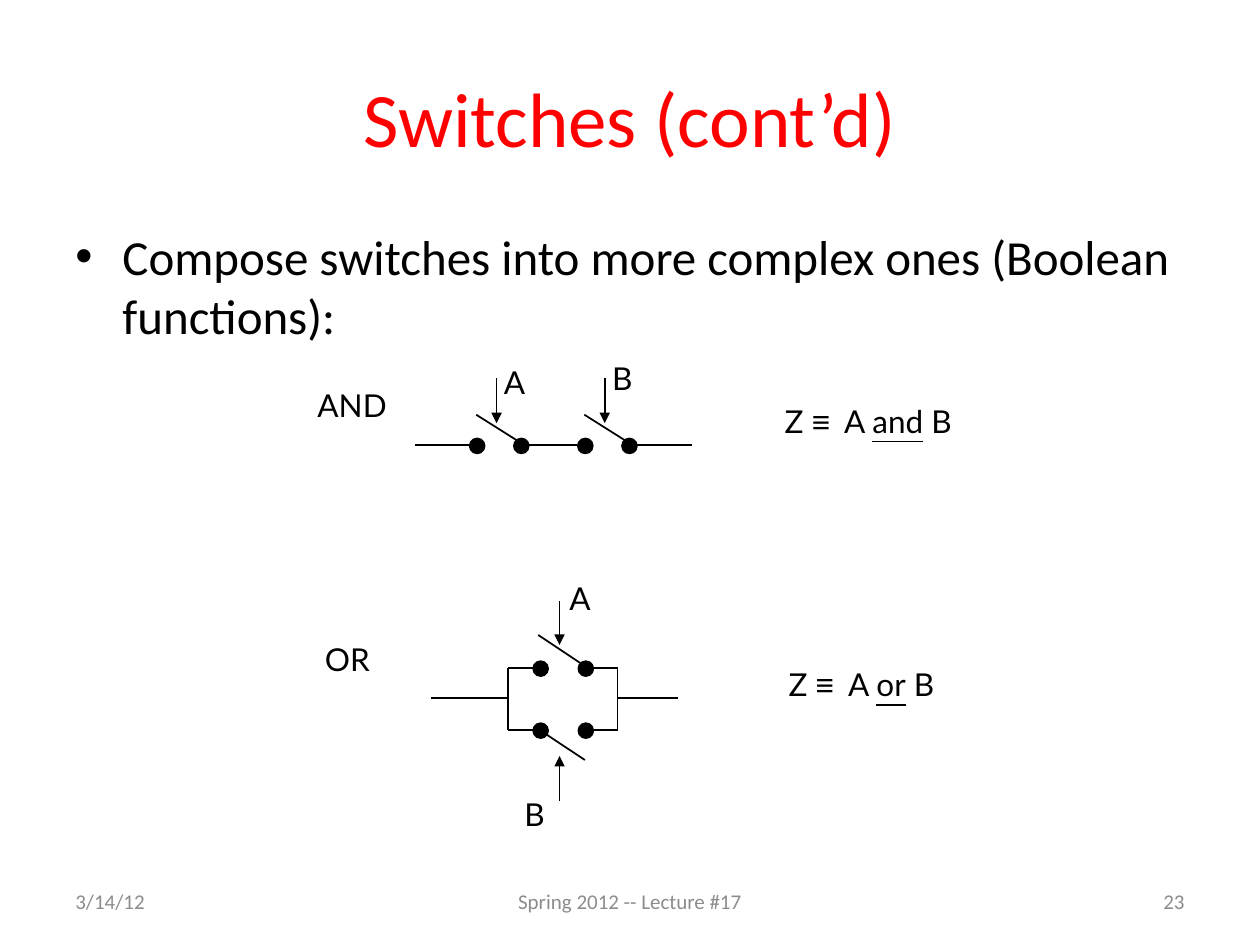
import dataclasses

import pptx
import pptx.dml.color
import pptx.enum.shapes
import pptx.enum.text
import pptx.oxml
import pptx.oxml.ns
import pptx.util

Cm = pptx.util.Cm
Pt = pptx.util.Pt
ALIGN = pptx.enum.text.PP_ALIGN
ANCHOR = pptx.enum.text.MSO_ANCHOR


@dataclasses.dataclass(frozen=True)
class Theme:
    ink: str = "000000"
    accent: str = "FF0000"
    muted: str = "8C8C8C"
    main_font: str = "Calibri"
    diagram_font: str = "Lato"
    symbol_font: str = "Arial"
    title_size: int = 44
    body_size: int = 28
    diagram_size: int = 18
    footer_size: int = 12
    line_width: int = 1
    contact_size: float = 0.3


@dataclasses.dataclass(frozen=True)
class Box:
    """A region in centimetres."""
    left: float
    top: float
    width: float
    height: float

    def inner(self, left, top, width, height):
        return Box(self.left + left, self.top + top, width, height)


THEME = Theme()


def color(value):
    return pptx.dml.color.RGBColor.from_string(value)


def add_xml(parent, tag, **attributes):
    element = pptx.oxml.parse_xml(f"<a:{tag} {pptx.oxml.ns.nsdecls('a')}/>")
    for name, value in attributes.items():
        element.set(name, value)
    parent.append(element)


def add_text(slide, box, text, size, font=THEME.main_font, ink=THEME.ink,
             align=ALIGN.LEFT, anchor=ANCHOR.TOP, insets=None,
             line_spacing=None, space_before=0, bullet_indent=None):
    """Place one paragraph; text is a string or a list of (text, run options)."""
    shape = slide.shapes.add_textbox(
        Cm(box.left), Cm(box.top), Cm(box.width), Cm(box.height))
    frame = shape.text_frame
    frame.word_wrap = True
    frame.vertical_anchor = anchor
    if insets:
        frame.margin_left = frame.margin_right = Cm(insets[0])
        frame.margin_top = frame.margin_bottom = Cm(insets[1])
    paragraph = frame.paragraphs[0]
    paragraph.alignment = align
    paragraph.space_before = Pt(space_before)
    if line_spacing:
        paragraph.line_spacing = Pt(line_spacing)
    if bullet_indent:
        properties = paragraph._p.get_or_add_pPr()
        properties.set("marL", str(Cm(bullet_indent)))
        properties.set("indent", str(-Cm(bullet_indent)))
        add_xml(properties, "buFont", typeface=THEME.symbol_font)
        add_xml(properties, "buChar", char="•")
    for words, options in [(text, {})] if isinstance(text, str) else text:
        run = paragraph.add_run()
        run.text = words
        run.font.name = options.get("font", font)
        run.font.size = Pt(size)
        run.font.color.rgb = color(ink)
        if options.get("underline"):
            run.font.underline = True
        if "tracking" in options:
            run._r.get_or_add_rPr().set("spc", str(options["tracking"] * 100))


def add_line(slide, box, start, end, arrow=False):
    connector = slide.shapes.add_connector(
        pptx.enum.shapes.MSO_CONNECTOR.STRAIGHT,
        Cm(box.left + start[0]), Cm(box.top + start[1]),
        Cm(box.left + end[0]), Cm(box.top + end[1]))
    connector.line.color.rgb = color(THEME.ink)
    connector.line.width = Pt(THEME.line_width)
    if arrow:
        add_xml(connector.line._get_or_add_ln(), "tailEnd", type="triangle")
    add_xml(connector._element.spPr, "effectLst")


def add_contact(slide, box, center):
    size = THEME.contact_size
    contact = slide.shapes.add_shape(
        pptx.enum.shapes.MSO_SHAPE.OVAL,
        Cm(box.left + center[0] - size / 2), Cm(box.top + center[1] - size / 2),
        Cm(size), Cm(size))
    contact.shadow.inherit = False
    contact.fill.solid()
    contact.fill.fore_color.rgb = color(THEME.ink)
    contact.line.color.rgb = color(THEME.ink)
    contact.line.width = Pt(THEME.line_width)


def add_label(slide, box, text, left, top, width=1.52, height=1.24, **options):
    add_text(slide, box.inner(left, top, width, height), text,
             THEME.diagram_size, font=THEME.diagram_font,
             insets=(0.05, 0.08), line_spacing=26, **options)


def add_formula(slide, box, operator, left, top):
    runs = [("Z ", {}), ("≡", {"font": THEME.symbol_font, "tracking": 4}),
            (" A ", {}), (operator, {"underline": True}), (" B", {})]
    add_label(slide, box, runs, left, top, 4.39, 1.63, space_before=11)


def add_series_diagram(slide, box):
    """AND: two switches one after the other."""
    pitch, wire_y = 2.18, 1.96
    add_label(slide, box, "AND", 0, 0.53, 2.51)
    for index in range(3):
        left = 2.01 + index * pitch
        add_line(slide, box, (left, wire_y), (left + 1.22, wire_y))
    for index, (name, label_top) in enumerate((("A", 0.08), ("B", 0))):
        shift = index * pitch
        add_line(slide, box, (3.25 + shift, 1.35), (4.17 + shift, 1.93))
        add_line(slide, box, (3.66 + shift, 0.61), (3.66 + shift, 1.52), arrow=True)
        for x in (3.27, 4.16):
            add_contact(slide, box, (x + shift, 1.98))
        add_label(slide, box, name, 3.76 + shift, label_top)
    add_formula(slide, box, "and", 9.42, 0.86)


def add_parallel_diagram(slide, box):
    """OR: two switches side by side between two rails."""
    left_rail, right_rail = 3.74, 5.95
    left_contact, right_contact = 4.4, 5.31
    upper, middle, lower = 2.03, 2.64, 3.28
    add_label(slide, box, "OR", 0, 1.24, 2.08)
    add_line(slide, box, (2.19, middle), (left_rail, middle))
    add_line(slide, box, (right_rail, middle), (7.17, middle))
    for rail, contact in ((left_rail, left_contact), (right_rail, right_contact)):
        add_line(slide, box, (rail, upper), (rail, lower))
        for y in (upper, lower):
            add_line(slide, box, (rail, y), (contact, y))
            add_contact(slide, box, (contact, y + 0.02))
    add_line(slide, box, (5.34, upper), (4.35, 1.37))
    add_line(slide, box, (left_contact, 3.3), (5.29, 3.89))
    for start, end in ((0.69, 1.57), (4.72, 3.81)):
        add_line(slide, box, (4.78, start), (4.78, end), arrow=True)
    add_label(slide, box, "A", 4.93, 0)
    add_label(slide, box, "B", 4.02, 4.37)
    add_formula(slide, box, "or", 9.35, 1.75)


def add_heading(slide, box):
    add_text(slide, box.inner(0, 0, box.width, 3.18), "Switches (cont’d)",
             THEME.title_size, ink=THEME.accent, align=ALIGN.CENTER,
             anchor=ANCHOR.MIDDLE)
    add_text(slide, box.inner(0, 3.68, box.width, 12.57),
             "Compose switches into more complex ones (Boolean functions):",
             THEME.body_size, space_before=5.6, bullet_indent=0.95)


def add_footer(slide, box):
    side, center = 5.92, 8.04
    parts = (("3/14/12", 0, side, ALIGN.LEFT),
             ("Spring 2012 -- Lecture #17", (box.width - center) / 2, center, ALIGN.CENTER),
             ("23", box.width - side, side, ALIGN.RIGHT))
    for text, left, width, align in parts:
        add_text(slide, box.inner(left, 0, width, box.height), text,
                 THEME.footer_size, ink=THEME.muted, align=align,
                 anchor=ANCHOR.MIDDLE)


def main():
    presentation = pptx.Presentation()
    presentation.slide_width, presentation.slide_height = Cm(25.4), Cm(19.05)
    slide = presentation.slides.add_slide(presentation.slide_layouts[6])
    add_heading(slide, Box(1.27, 0.76, 22.86, 16.25))
    add_series_diagram(slide, Box(6.35, 7.01, 13.81, 2.5))
    add_parallel_diagram(slide, Box(6.5, 11.43, 13.74, 5.61))
    add_footer(slide, Box(1.27, 17.65, 22.86, 1.02))
    presentation.save("out.pptx")


if __name__ == "__main__":
    main()
